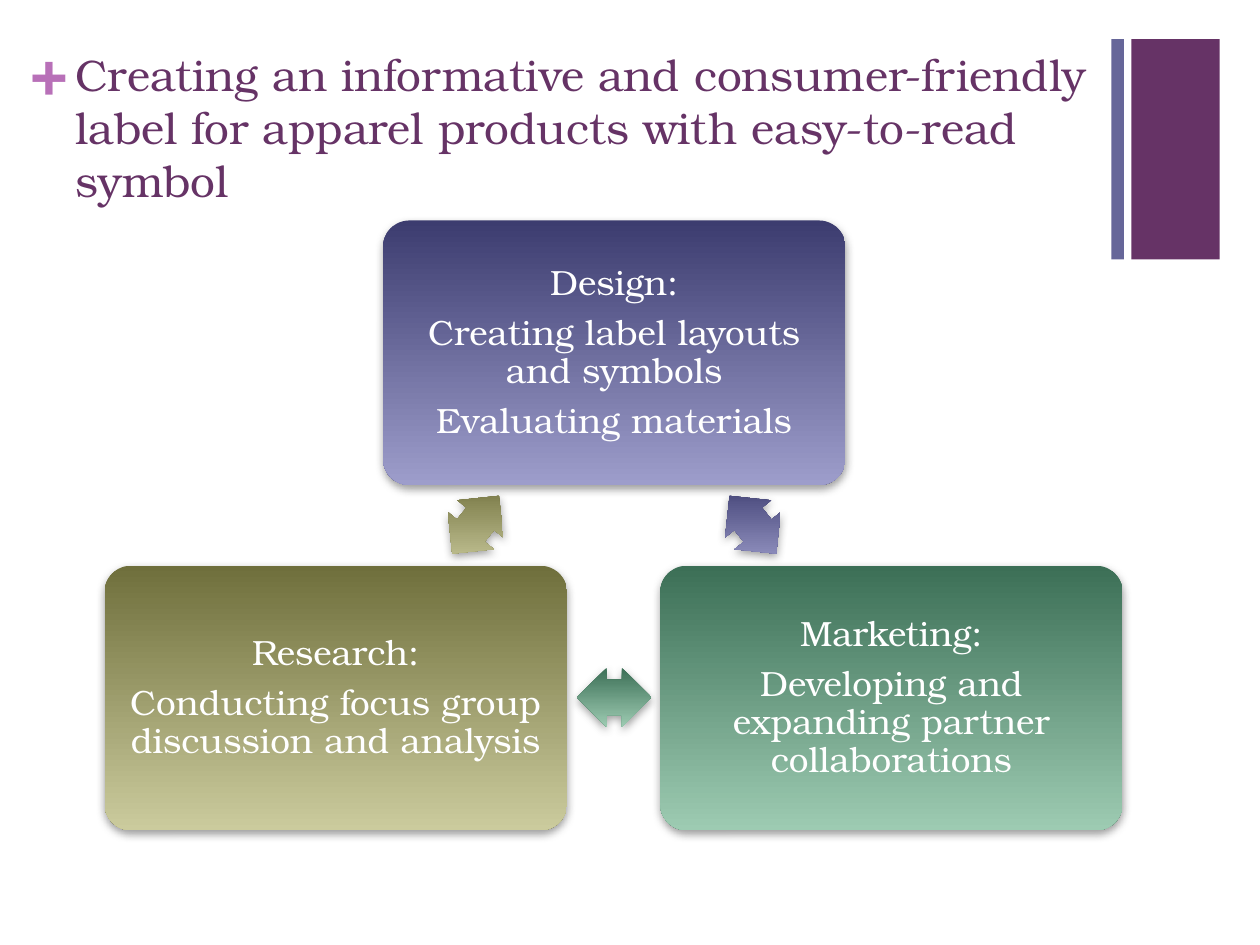
from lxml import etree
from pptx import Presentation
from pptx.dml.color import RGBColor
from pptx.enum.shapes import MSO_SHAPE
from pptx.enum.text import MSO_ANCHOR, PP_ALIGN
from pptx.oxml import parse_xml
from pptx.oxml.ns import qn
from pptx.util import Inches, Pt

RECT = MSO_SHAPE.RECTANGLE
ROUND = MSO_SHAPE.ROUNDED_RECTANGLE
ARROW = MSO_SHAPE.LEFT_RIGHT_ARROW
MIDDLE = MSO_ANCHOR.MIDDLE
CENTER = PP_ALIGN.CENTER
FONT = "TeX Gyre Bonum"
PLUM = "663366"
SHADOW = """<a:outerShdw xmlns:a="http://schemas.openxmlformats.org/drawingml/2006/main"
  blurRad="63500" dist="25400" dir="5400000" rotWithShape="0">
  <a:srgbClr val="808080"><a:alpha val="75000"/></a:srgbClr></a:outerShdw>"""


def style(font, size, color):
    font.name = FONT
    font.size = Pt(size)
    font.color.rgb = RGBColor.from_string(color)


def shade(shape, colors):
    """Fill from top to bottom, whatever the rotation, and cast a soft shadow."""
    shape.fill.gradient()
    shape.fill.gradient_angle = 270
    for stop, color in zip(shape.fill.gradient_stops, colors):
        stop.color.rgb = RGBColor.from_string(color)
    shape.line.fill.background()
    shape.shadow.inherit = False
    props = shape._element.spPr
    props.find(qn("a:gradFill")).set("rotWithShape", "0")
    props.find(qn("a:effectLst")).append(parse_xml(SHADOW))


deck = Presentation()
deck.slide_width, deck.slide_height = Inches(10), Inches(7.5)
slide = deck.slides.add_slide(deck.slide_layouts[6])
shapes = slide.shapes

# Corner bars
for left, width, color in [(8.98, 0.7, PLUM), (8.82, 0.1, "666699")]:
    bar = shapes.add_shape(RECT, Inches(left), Inches(0.31), Inches(width), Inches(1.75))
    bar.fill.solid()
    bar.fill.fore_color.rgb = RGBColor.from_string(color)
    bar.line.fill.background()
    bar.shadow.inherit = False

# Plus sign
plus = shapes.add_textbox(Inches(0.24), Inches(0.25), Inches(0.29), Inches(0.61)).text_frame
plus.margin_left = plus.margin_right = plus.margin_top = plus.margin_bottom = 0
para = plus.paragraphs[0]
para.text = "+"
style(para.font, 36, "B870B8")
para.font.bold = True

# Title
title = shapes.add_textbox(Inches(0.5), Inches(0.33), Inches(9), Inches(1)).text_frame
title.word_wrap = True
title.margin_right = Inches(0.5)
para = title.paragraphs[0]
para.text = ("Creating an informative and consumer-friendly label for apparel "
             "products with easy-to-read symbol")
style(para.font, 25.2, PLUM)

# Cycle: box left and top, arrow left, top and turn, colours, lines
cycle = [
    (3.04, 1.75, 5.68, 3.93, 51.1, ("3C3C6F", "9D9DCB"),
     ["Design:", "Creating label layouts and symbols", "Evaluating materials"]),
    (5.24, 4.49, 4.58, 5.3, 180, ("3C6F56", "9DCBB2"),
     ["Marketing:", "Developing and expanding partner collaborations"]),
    (0.83, 4.49, 3.48, 3.93, 308.9, ("6F6F3C", "CBCB9D"),
     ["Research:", "Conducting focus group discussion and analysis"]),
]
for left, top, x, y, turn, colors, lines in cycle:
    box = shapes.add_shape(ROUND, Inches(left), Inches(top), Inches(3.67), Inches(2.1))
    box.adjustments[0] = 0.1
    shade(box, colors)
    frame = box.text_frame
    frame.word_wrap = True
    frame.vertical_anchor = MIDDLE
    frame.margin_left = frame.margin_right = Inches(0.02)
    frame.margin_top = frame.margin_bottom = Inches(0.02)
    for i, line in enumerate(lines):
        para = frame.add_paragraph() if i else frame.paragraphs[0]
        para.text = line
        para.alignment = CENTER
        para.line_spacing = 0.9
        para.space_after = Pt(7)
        style(para.font, 20, "FFFFFF")

    arrow = shapes.add_shape(ARROW, Inches(x), Inches(y), Inches(0.59), Inches(0.47))
    arrow.adjustments[0] = 0.6
    arrow.adjustments[1] = 0.5
    arrow.rotation = turn
    shade(arrow, colors)

deck.save("out.pptx")
